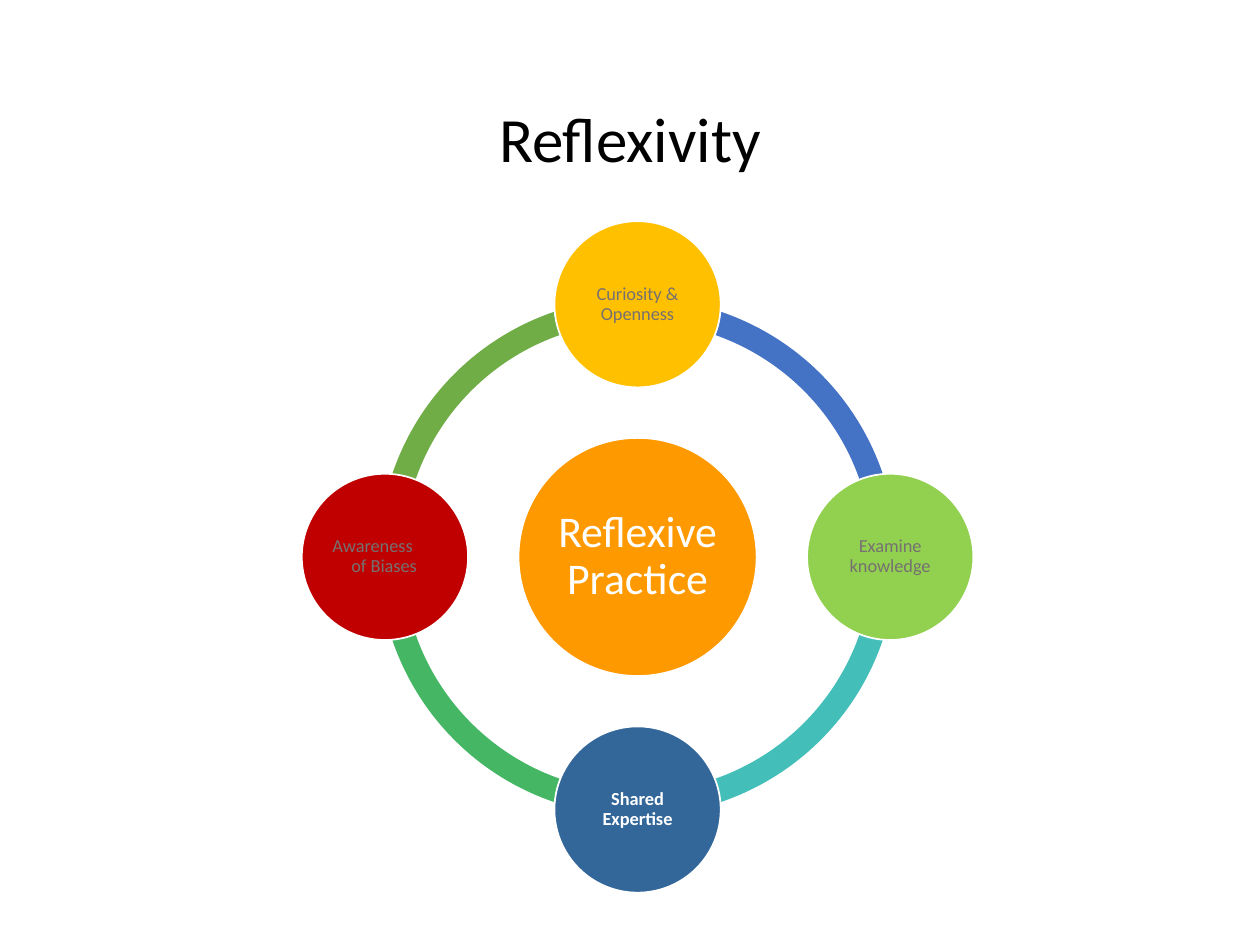
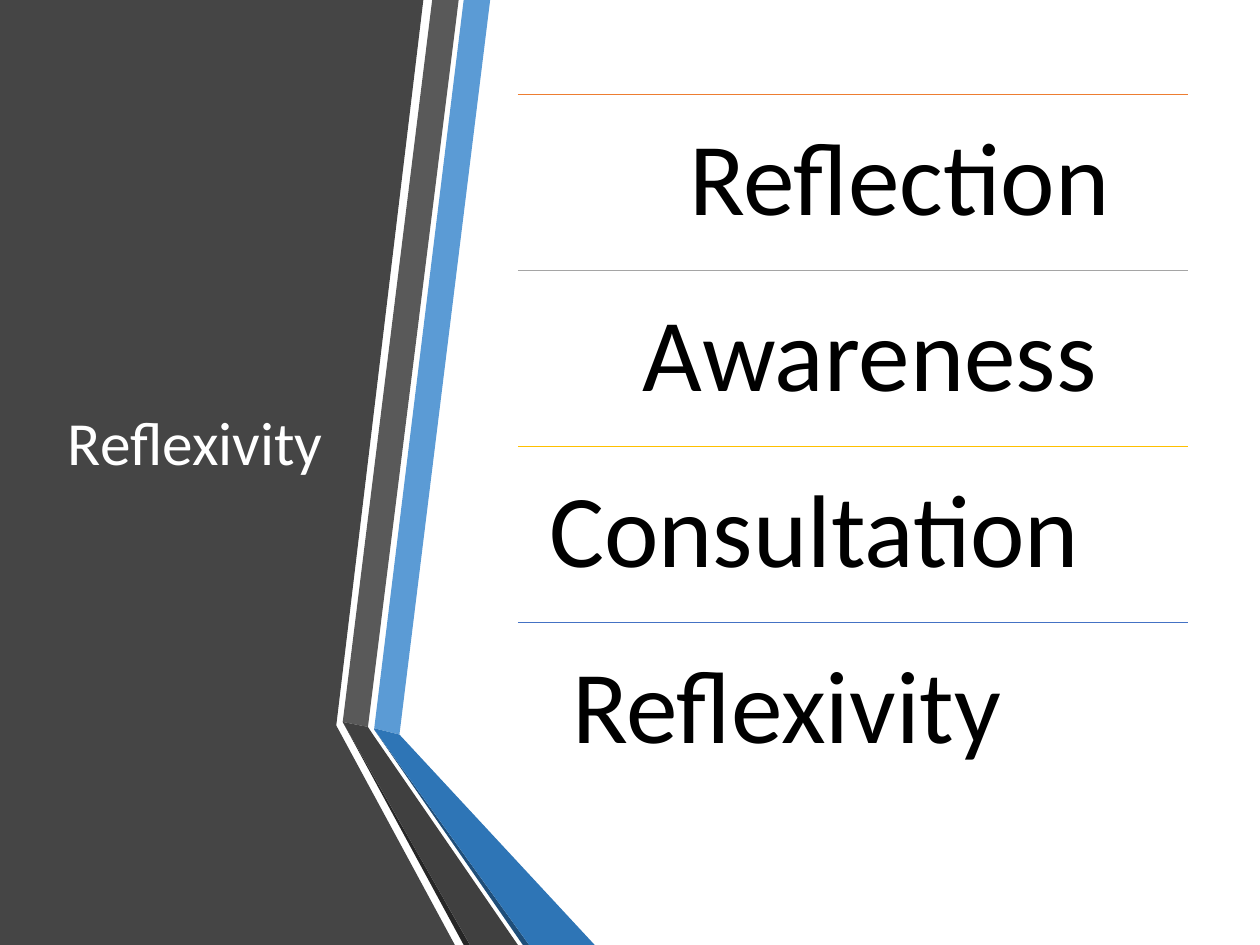
import math

import pptx
import pptx.dml.color
import pptx.enum.shapes
import pptx.enum.text
import pptx.oxml
import pptx.oxml.ns
import pptx.util

Inches = pptx.util.Inches
Pt = pptx.util.Pt
Shape = pptx.enum.shapes.MSO_SHAPE
Align = pptx.enum.text.PP_ALIGN
Anchor = pptx.enum.text.MSO_ANCHOR

FONT = "Calibri"
BLACK, WHITE, GREY = "000000", "FFFFFF", "767171"
GOLD, BLUE = "FFC000", "4472C4"

# Ring of ideas: centre and radius of the circle the ideas sit on
CENTRE_X, CENTRE_Y, ORBIT = 5.06, 4.42, 2.005
ARC_SIZE, ARC_THICKNESS = 4.11, 0.046
QUARTER = 54  # blockArc adjustment for 90 degrees
CORE_SIZE, IDEA_SIZE = 1.89, 1.32

# Clockwise from the right: label, fill, text colour, bold, colour of next arc
IDEAS = [
    ("Examine knowledge", "92D050", GREY, False, "43BEB9"),
    ("Shared Expertise", "336699", WHITE, True, "45B664"),
    ("Awareness\vof Biases", "C00000", GREY, False, "70AD47"),
    ("Curiosity & Openness", GOLD, GREY, False, BLUE),
]

# Folded ribbon panel: fill and outline points
PANEL = [
    ("454545", [(0, 0), (2.64, 0), (3.36, 0), (2.67, 5.75), (2.67, 5.76),
                (3.61, 7.5), (0, 7.5)]),
    ("5B9BD5", [(2.97, 5.78), (3.17, 5.83), (3.89, 0), (3.68, 0)]),
    ("595959", [(3.64, 0), (3.43, 0), (2.72, 5.73), (2.92, 5.77)]),
    ("262626", [(2.72, 5.73), (3.68, 7.5), (3.73, 7.5)]),
    ("1F4E79", [(2.97, 5.79), (4.15, 7.5), (4.2, 7.5)]),
    ("2E75B6", [(2.97, 5.79), (4.2, 7.5), (4.72, 7.5), (3.17, 5.83), (2.97, 5.78)]),
    ("404040", [(4.11, 7.5), (2.96, 5.83), (2.92, 5.77), (2.72, 5.73), (3.73, 7.5)]),
]

# Steps: word, rule colour, indent of the word
STEPS = [
    ("Reflection", "ED7D31", 1.11),
    ("Awareness", "A5A5A5", 0.74),
    ("Consultation", GOLD, 0),
    ("Reflexivity", BLUE, 0.18),
]
STEP_LEFT, STEP_TOP, STEP_WIDTH, STEP_HEIGHT = 4.11, 0.75, 5.32, 1.397


def colour(hex_string):
    return pptx.dml.color.RGBColor.from_string(hex_string)


def paint(shape, fill, outline=None):
    shape.shadow.inherit = False
    shape.fill.solid()
    shape.fill.fore_color.rgb = colour(fill)
    if outline:
        shape.line.color.rgb = colour(outline)
        shape.line.width = Pt(1)
    else:
        shape.line.fill.background()


def write(shape, text, size, text_colour, align=Align.LEFT, anchor=Anchor.MIDDLE,
          insets=(0.1, 0.05, 0.1, 0.05), bold=False):
    """Fill a shape with one paragraph; a vertical tab breaks the line."""
    frame = shape.text_frame
    frame.word_wrap = True
    frame.vertical_anchor = anchor
    (frame.margin_left, frame.margin_top,
     frame.margin_right, frame.margin_bottom) = map(Inches, insets)
    paragraph = frame.paragraphs[0]
    paragraph.alignment = align
    paragraph.line_spacing = 0.9
    for number, line in enumerate(text.split("\v")):
        if number:
            paragraph.add_line_break()
        run = paragraph.add_run()
        run.text = line
        run.font.name = FONT
        run.font.size = Pt(size)
        run.font.bold = bold
        run.font.color.rgb = colour(text_colour)
    return paragraph


def add_text(slide, box, *args, **style):
    return write(slide.shapes.add_textbox(*map(Inches, box)), *args, **style)


def add_centred(slide, preset, x, y, size):
    return slide.shapes.add_shape(preset, Inches(x - size / 2), Inches(y - size / 2),
                                  Inches(size), Inches(size))


def add_circle(slide, x, y, size, fill, text, text_size, text_colour, inset, bold=False):
    circle = add_centred(slide, Shape.OVAL, x, y, size)
    paint(circle, fill, WHITE)
    return write(circle, text, text_size, text_colour, Align.CENTER,
                 insets=(inset,) * 4, bold=bold)


def add_arc(slide, start, end, fill):
    arc = add_centred(slide, Shape.BLOCK_ARC, CENTRE_X, CENTRE_Y, ARC_SIZE)
    for index, value in enumerate((start, end, ARC_THICKNESS)):
        arc.adjustments[index] = value
    paint(arc, fill)


def add_outline(slide, fill, points):
    corners = [(Inches(x), Inches(y)) for x, y in points]
    builder = slide.shapes.build_freeform(*corners[0])
    builder.add_line_segments(corners[1:], close=True)
    paint(builder.convert_to_shape(), fill)


def add_rule(slide, left, top, width, rule_colour):
    rule = slide.shapes.add_connector(
        pptx.enum.shapes.MSO_CONNECTOR.STRAIGHT,
        Inches(left), Inches(top), Inches(left + width), Inches(top))
    rule.line.color.rgb = colour(rule_colour)
    rule.line.width = Pt(1)
    properties = rule.line._get_or_add_ln().getparent()
    properties.append(pptx.oxml.parse_xml(
        "<a:effectLst %s/>" % pptx.oxml.ns.nsdecls("a")))


def hang(paragraph, left, first_line):
    """Left-align a paragraph with a hanging indent."""
    paragraph.alignment = Align.LEFT
    properties = paragraph._p.get_or_add_pPr()
    properties.set("marL", str(Inches(left)))
    properties.set("indent", str(Inches(first_line)))


def build_ring_slide(slide):
    add_text(slide, (0.69, 0.4, 8.62, 1.45), "Reflexivity", 36, BLACK, Align.CENTER)

    # Arcs lie behind the circles
    for index, idea in enumerate(IDEAS):
        add_arc(slide, index * QUARTER, (index + 1) % 4 * QUARTER, idea[-1])

    add_circle(slide, CENTRE_X, CENTRE_Y, CORE_SIZE, "FF9900",
               "Reflexive Practice", 25, WHITE, 0.03)
    for index, (label, fill, text_colour, bold, _) in enumerate(IDEAS):
        angle = index * math.pi / 2
        paragraph = add_circle(
            slide, CENTRE_X + ORBIT * math.cos(angle), CENTRE_Y + ORBIT * math.sin(angle),
            IDEA_SIZE, fill, label, 10.5, text_colour, 0.02, bold)
        if "\v" in label:
            hang(paragraph, 0.18, -0.15)


def build_steps_slide(slide):
    # Side panel with its title
    for fill, points in PANEL:
        add_outline(slide, fill, points)
    add_text(slide, (0.44, 0.75, 2.28, 5.58), "Reflexivity", 35, WHITE)

    # Ruled list of steps
    for index, (word, rule_colour, indent) in enumerate(STEPS):
        top = STEP_TOP + index * STEP_HEIGHT
        add_rule(slide, STEP_LEFT, top, STEP_WIDTH, rule_colour)
        add_text(slide, (STEP_LEFT, top, STEP_WIDTH, STEP_HEIGHT), word, 59, BLACK,
                 anchor=Anchor.TOP, insets=(0.25 + indent, 0.25, 0.25, 0.25))


def main():
    deck = pptx.Presentation()
    deck.slide_width, deck.slide_height = Inches(10), Inches(7.5)
    blank = deck.slide_layouts[6]
    for build in (build_ring_slide, build_steps_slide):
        build(deck.slides.add_slide(blank))
    deck.save("out.pptx")


if __name__ == "__main__":
    main()
